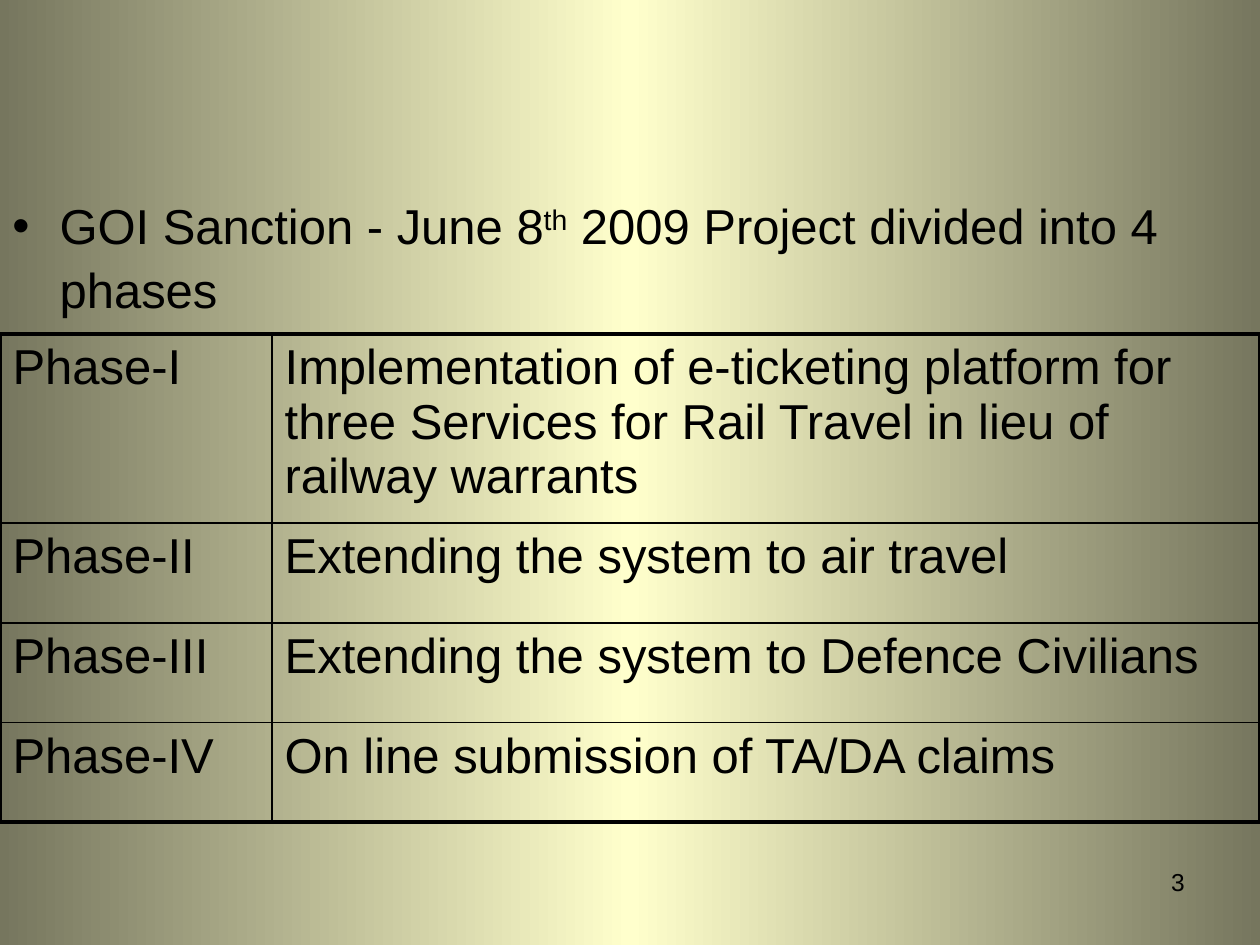
"""Build a slide that lists the four phases of a sanctioned project."""
import copy

import lxml.etree
import pptx
import pptx.dml.color
import pptx.enum.text
import pptx.oxml
import pptx.oxml.ns
import pptx.util

Pt = pptx.util.Pt
qn = pptx.oxml.ns.qn
hues = {"edge": "76765E", "mid": "FFFFCC", "ink": "000000"}
phases = [
    ("Phase-I", "Implementation of e-ticketing platform for three Services "
                "for Rail Travel in lieu of railway warrants"),
    ("Phase-II", "Extending the system to air travel"),
    ("Phase-III", "Extending the system to Defence Civilians"),
    ("Phase-IV", "On line submission of TA/DA claims"),
]


def add_run(para, text, size):
    run = para.add_run()
    run.text = text
    run.font.name = "Arial"
    run.font.size = Pt(size)
    run.font.color.rgb = pptx.dml.color.RGBColor.from_string(hues["ink"])
    return run


def add_edge(cell, order, side, width):
    line = pptx.oxml.parse_xml(
        f'<a:{side} xmlns:a="http://schemas.openxmlformats.org/drawingml/2006/main" '
        f'w="{Pt(width)}"><a:solidFill><a:srgbClr val="{hues["ink"]}"/>'
        f'</a:solidFill></a:{side}>')
    cell._tc.get_or_add_tcPr().insert(order, line)


deck = pptx.Presentation()
deck.slide_width, deck.slide_height = Pt(720), Pt(540)
slide = deck.slides.add_slide(deck.slide_layouts[6])

fill = slide.background.fill
fill.gradient()
fill.gradient_angle = 0
stops = next(slide.element.iter(qn("a:gsLst")))
stops.append(copy.deepcopy(stops[0]))
for stop, place, hue in zip(fill.gradient_stops, (0, 0.5, 1), ("edge", "mid", "edge")):
    stop.position = place
    stop.color.rgb = pptx.dml.color.RGBColor.from_string(hues[hue])

number = slide.shapes.add_textbox(Pt(516), Pt(492), Pt(168), Pt(37.5)).text_frame
number.word_wrap = True
number.paragraphs[0].alignment = pptx.enum.text.PP_ALIGN.RIGHT
add_run(number.paragraphs[0], "3", 14)

body = slide.shapes.add_textbox(0, Pt(71.25), Pt(720), Pt(522)).text_frame
body.word_wrap = True
body.margin_top = Pt(38)
intro = body.paragraphs[0]
intro.line_spacing = 1.08
props = intro._p.get_or_add_pPr()
props.set("marL", str(Pt(27)))
props.set("indent", str(Pt(-27)))
lxml.etree.SubElement(props, qn("a:buFont")).set("typeface", "Arial")
lxml.etree.SubElement(props, qn("a:buChar")).set("char", "•")
add_run(intro, "GOI Sanction - June 8", 28)
add_run(intro, "th", 28).font._element.set("baseline", "30000")
add_run(intro, " 2009 Project divided into 4 phases", 28)

table = slide.shapes.add_table(4, 2, 0, Pt(190.8), Pt(720), Pt(272)).table
table.first_row = table.horz_banding = False
for col, width in zip(table.columns, (155.5, 564.5)):
    col.width = Pt(width)
for row, height in zip(table.rows, (101, 57, 57, 57)):
    row.height = Pt(height)
for i, phase in enumerate(phases):
    for j, text in enumerate(phase):
        cell = table.cell(i, j)
        cell.fill.background()
        outer = {"lnL": j == 0, "lnR": j == 1, "lnT": i == 0, "lnB": i == 3}
        for order, (side, thick) in enumerate(outer.items()):
            add_edge(cell, order, side, 2.25 if thick else 1)
        add_run(cell.text_frame.paragraphs[0], text, 28)

deck.save("out.pptx")
